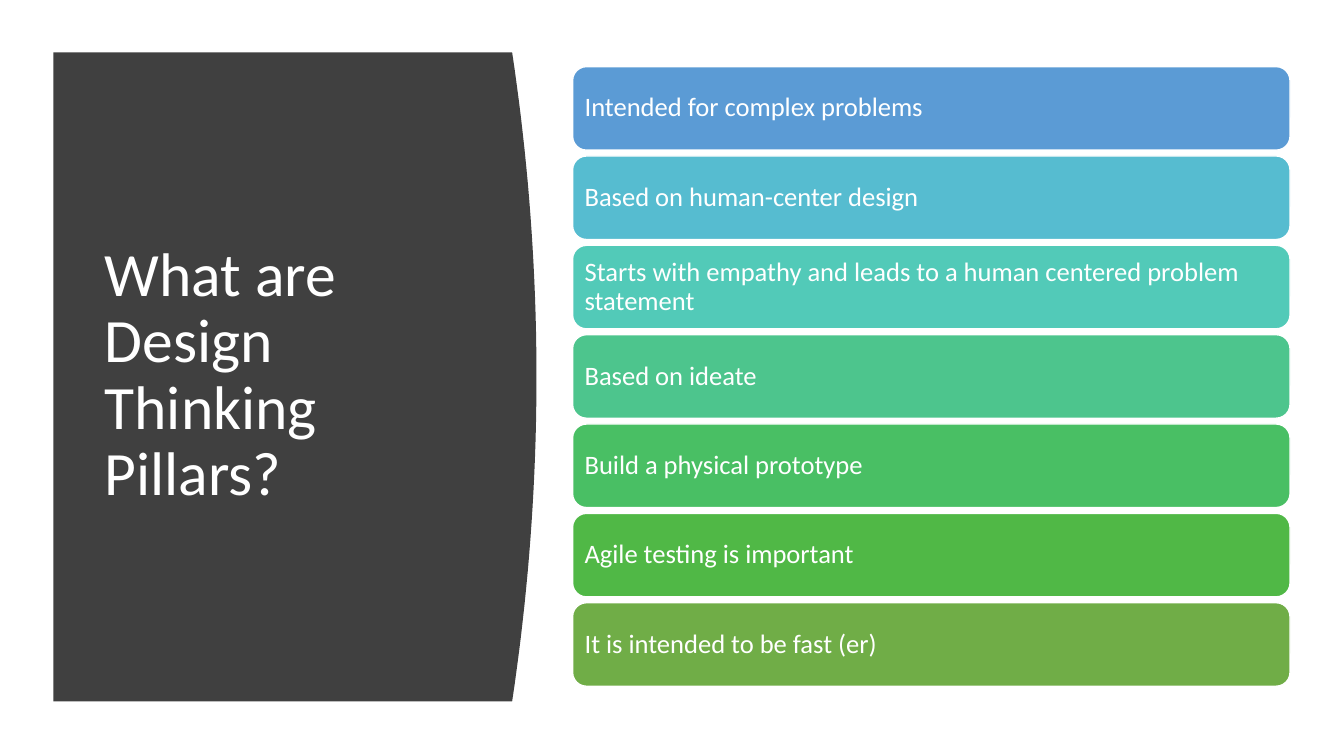
"""Build the design thinking pillars slide."""
from pptx import Presentation
from pptx.dml.color import RGBColor
from pptx.enum.shapes import MSO_SHAPE
from pptx.enum.text import MSO_ANCHOR, PP_ALIGN
from pptx.util import Pt

TITLE = "What are Design Thinking Pillars?"
PILLARS = [
    ("Intended for complex problems", "blue"),
    ("Based on human-center design", "cyan"),
    ("Starts with empathy and leads to a human centered problem statement", "aqua"),
    ("Based on ideate", "mint"),
    ("Build a physical prototype", "jade"),
    ("Agile testing is important", "green"),
    ("It is intended to be fast (er)", "olive"),
]
COLORS = {
    "panel": "404040", "white": "FFFFFF", "blue": "5B9BD5", "cyan": "56BCD0",
    "aqua": "52CAB8", "mint": "4DC58D", "jade": "49BF64", "green": "50B846",
    "olive": "70AD47",
}
FONT = "Calibri"
ROUND = MSO_SHAPE.ROUNDED_RECTANGLE
MIDDLE = MSO_ANCHOR.MIDDLE
LEFT = PP_ALIGN.LEFT

PANEL = {"left": 38.2, "top": 37.4, "bottom": 501.1, "edge": 365.8, "bulge": 17.4}
CURVE_STEPS = 40
HEAD = (67.7, 80, 269.3, 377)
BAR = {"left": 409, "top": 47.6, "width": 512.5, "height": 59.7, "step": 63.82}
INSET = 5.7


def color(name):
    return RGBColor.from_string(COLORS[name])


def paint(shape, name):
    shape.shadow.inherit = False
    shape.fill.solid()
    shape.fill.fore_color.rgb = color(name)


def write(shape, text, size):
    frame = shape.text_frame
    frame.word_wrap = True
    frame.vertical_anchor = MIDDLE
    frame.text = text
    line = frame.paragraphs[0]
    line.alignment = LEFT
    line.line_spacing = 0.9
    font = line.runs[0].font
    font.name = FONT
    font.size = Pt(size)
    font.color.rgb = color("white")
    return frame


def add_panel(slide):
    left, top, bottom = PANEL["left"], PANEL["top"], PANEL["bottom"]
    points = []
    for i in range(CURVE_STEPS + 1):
        part = i / CURVE_STEPS
        x = PANEL["edge"] + PANEL["bulge"] * (1 - (2 * part - 1) ** 2)
        points.append((Pt(x), Pt(top + part * (bottom - top))))
    points.append((Pt(left), Pt(bottom)))
    path = slide.shapes.build_freeform(Pt(left), Pt(top))
    path.add_line_segments(points, close=True)
    panel = path.convert_to_shape()
    paint(panel, "panel")
    panel.line.fill.background()


def add_bar(slide, row, text, name):
    top = BAR["top"] + row * BAR["step"]
    bar = slide.shapes.add_shape(
        ROUND, Pt(BAR["left"]), Pt(top), Pt(BAR["width"]), Pt(BAR["height"]))
    paint(bar, name)
    bar.line.color.rgb = color("white")
    bar.line.width = Pt(1)
    frame = write(bar, text, 19)
    frame.margin_left = frame.margin_right = Pt(INSET)
    frame.margin_top = frame.margin_bottom = Pt(INSET)


def main():
    deck = Presentation()
    deck.slide_width, deck.slide_height = Pt(960), Pt(540)
    slide = deck.slides.add_slide(deck.slide_layouts[6])
    add_panel(slide)
    write(slide.shapes.add_textbox(*map(Pt, HEAD)), TITLE, 44)
    for row, (text, name) in enumerate(PILLARS):
        add_bar(slide, row, text, name)
    deck.save("out.pptx")


if __name__ == "__main__":
    main()
